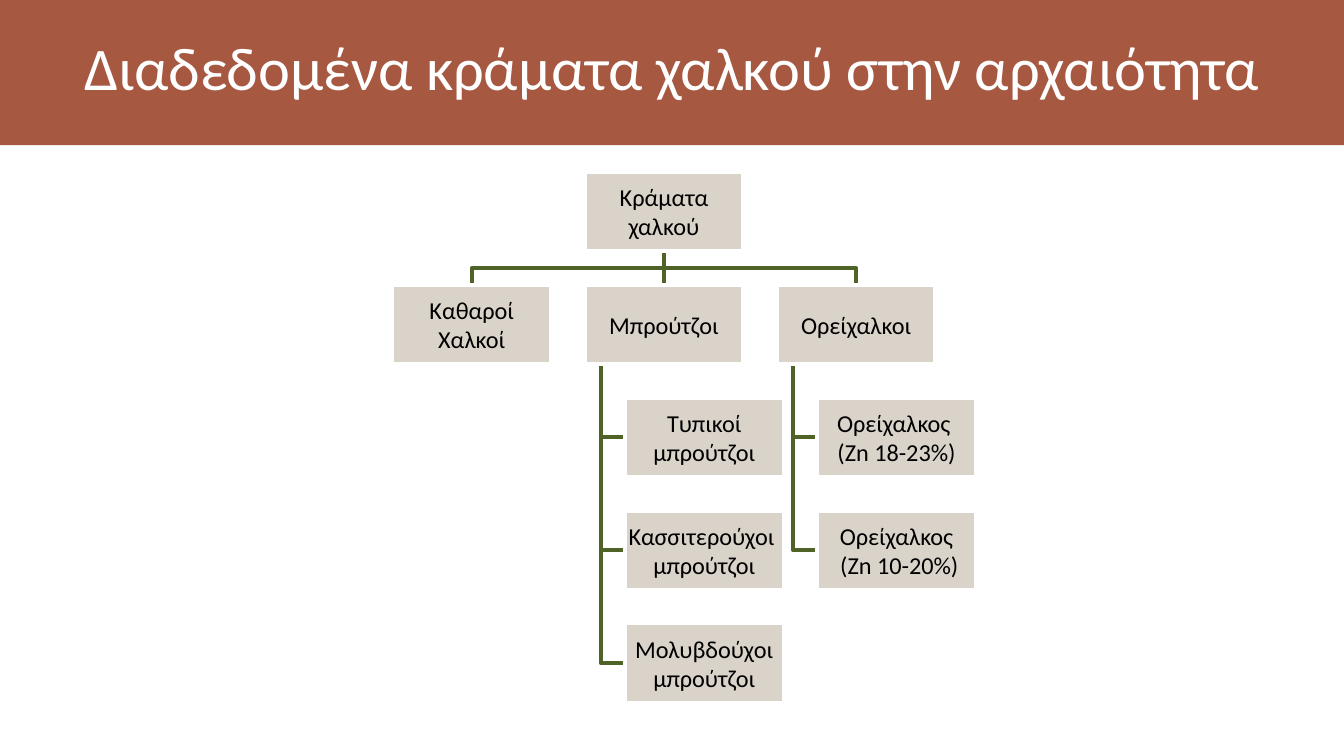
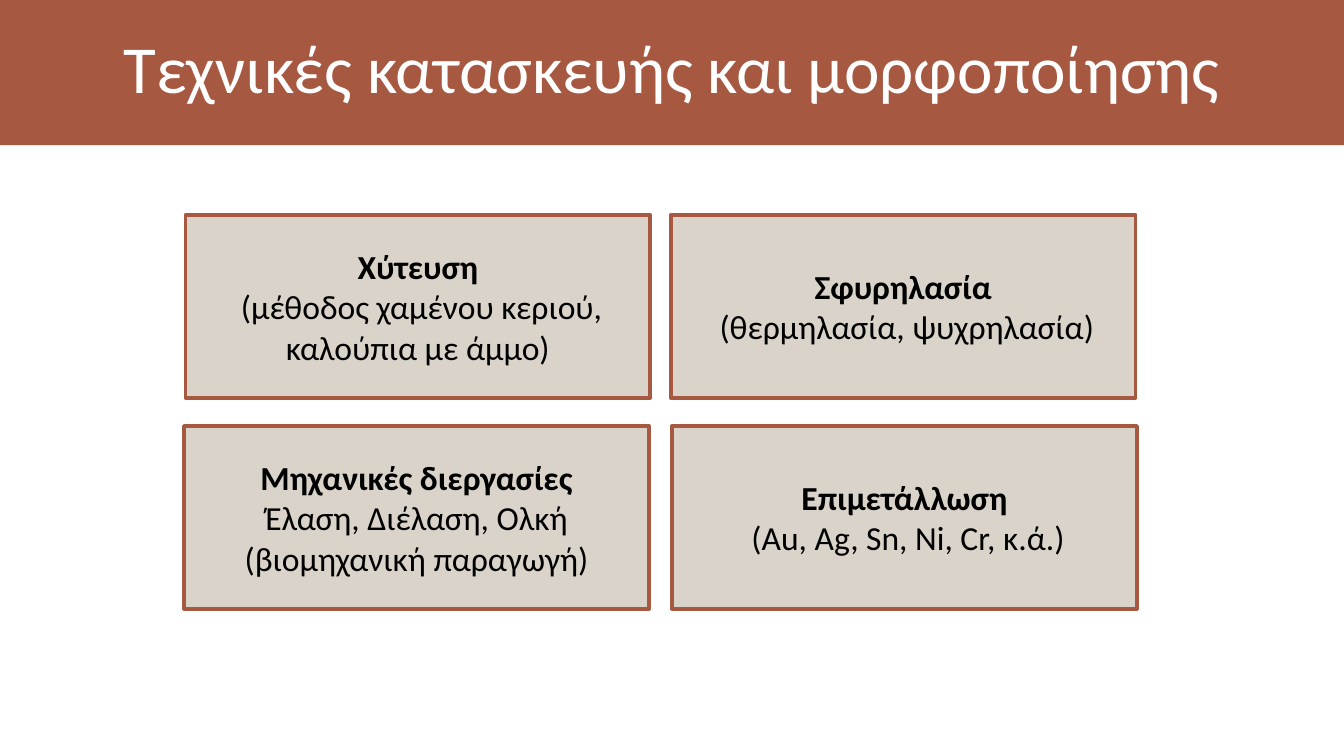
from dataclasses import dataclass

from lxml import etree
from pptx import Presentation
from pptx import util as u
from pptx.dml.color import RGBColor
from pptx.enum import shapes, text
from pptx.oxml.ns import qn

ALLOYS_TITLE = "Διαδεδομένα κράματα χαλκού στην αρχαιότητα"
ROOT = ["Κράματα χαλκού"]
BRANCHES = [
    (["Καθαροί Χαλκοί"], []),
    (["Μπρούτζοι"], [
        ["Τυπικοί μπρούτζοι"],
        ["Κασσιτερούχοι ", "μπρούτζοι"],
        ["Μολυβδούχοι", "μπρούτζοι"],
    ]),
    (["Ορείχαλκοι"], [
        ["Ορείχαλκος ", "(Zn 18-23%)"],
        ["Ορείχαλκος", " (Zn 10-20%)"],
    ]),
]

TECHNIQUES_TITLE = "Τεχνικές κατασκευής και μορφοποίησης"
TECHNIQUES = [
    ["Χύτευση", " (μέθοδος χαμένου κεριού, καλούπια με άμμο)"],
    ["Σφυρηλασία", " (θερμηλασία, ψυχρηλασία)"],
    ["Μηχανικές διεργασίες", "Έλαση, Διέλαση, Ολκή", "(βιομηχανική παραγωγή)"],
    ["Επιμετάλλωση", " (Au, Ag, Sn, Ni, Cr, κ.ά.)"],
]


@dataclass(frozen=True)
class Theme:
    font: str = "Calibri"
    rust: str = "A65841"
    sand: str = "DAD3C9"
    green: str = "4F6228"
    white: str = "FFFFFF"
    black: str = "000000"
    long_title: float = 32.4
    title: float = 36
    node: float = 13
    card: float = 18
    line: float = 2


T = Theme()
SLIDE_W, BAND_H = 10, 1.08
SLIDE_H = SLIDE_W * 9 / 16
NODE_W, NODE_H = 1.18, 0.59
TREE_X, TREE_Y, COL_STEP, ROW_STEP = 2.92, 1.28, 1.43, 0.84
LEAF_INDENT, TRUNK_INDENT = 0.3, 0.12
CARD_W, CARD_H = 3.46, 1.36
CARD_Y, CARD_ROW = 1.6, 1.57
CARD_ROWS = [(1.38, 4.99), (1.37, 5)]


def rgb(value):
    return RGBColor.from_string(value)


def apply(obj, **values):
    for name, value in values.items():
        setattr(obj, name, value)


def write(tf, lines, size, color, bold_first=False):
    apply(tf, word_wrap=True, auto_size=text.MSO_AUTO_SIZE.NONE,
          vertical_anchor=text.MSO_ANCHOR.MIDDLE)
    for i, line in enumerate(lines):
        p = tf.paragraphs[0] if i == 0 else tf.add_paragraph()
        p.alignment = text.PP_ALIGN.CENTER
        r = p.add_run()
        r.text = line
        apply(r.font, name=T.font, size=u.Pt(size), bold=bold_first and i == 0)
        r.font.color.rgb = rgb(color)


def set_line(sp, color):
    sp.line.color.rgb = rgb(color)
    sp.line.width = u.Pt(T.line)


def add_rect(s, x, y, w, h, fill, line=None):
    sp = s.shapes.add_shape(shapes.MSO_SHAPE.RECTANGLE, *map(u.Inches, (x, y, w, h)))
    sp.shadow.inherit = False
    sp.fill.solid()
    sp.fill.fore_color.rgb = rgb(fill)
    if line:
        set_line(sp, line)
    else:
        sp.line.fill.background()
    return sp


def add_node(s, x, y, lines):
    tf = add_rect(s, x, y, NODE_W, NODE_H, T.sand, T.white).text_frame
    inset = u.Inches(0.01)
    apply(tf, margin_left=inset, margin_top=inset, margin_right=inset, margin_bottom=inset)
    write(tf, lines, T.node, T.black)


def add_link(s, points):
    points = [(u.Inches(x), u.Inches(y)) for x, y in points]
    if len(points) == 2:
        c = s.shapes.add_connector(shapes.MSO_CONNECTOR.STRAIGHT, *points[0], *points[1])
        set_line(c, T.green)
        etree.SubElement(c.element.spPr, qn("a:effectLst"))
        return
    builder = s.shapes.build_freeform(*points[0])
    builder.add_line_segments(points[1:], close=False)
    sp = builder.convert_to_shape()
    sp.shadow.inherit = False
    sp.fill.background()
    set_line(sp, T.green)


def add_slide(prs, title, size):
    s = prs.slides.add_slide(prs.slide_layouts[5])
    sp = s.shapes.title
    apply(sp, left=u.Inches(0.5), top=u.Inches(0.07), width=u.Inches(9), height=u.Inches(0.85))
    write(sp.text_frame, [title], size, T.white)
    return s


def add_tree(s):
    root_x = TREE_X + COL_STEP
    root_mid, root_bottom = root_x + NODE_W / 2, TREE_Y + NODE_H
    branch_y = TREE_Y + ROW_STEP
    bus_y = (root_bottom + branch_y) / 2
    links, nodes = [], [(root_x, TREE_Y, ROOT)]
    for col, (label, leaves) in enumerate(BRANCHES):
        x = TREE_X + col * COL_STEP
        mid = x + NODE_W / 2
        nodes.append((x, branch_y, label))
        bends = [] if x == root_x else [(root_mid, bus_y), (mid, bus_y)]
        links.append([(root_mid, root_bottom), *bends, (mid, branch_y)])
        trunk = x + TRUNK_INDENT
        for row, leaf in enumerate(leaves, 1):
            y = branch_y + row * ROW_STEP
            leaf_mid = y + NODE_H / 2
            nodes.append((x + LEAF_INDENT, y, leaf))
            links.append([(trunk, branch_y + NODE_H), (trunk, leaf_mid),
                          (x + LEAF_INDENT, leaf_mid)])
    for points in links:
        add_link(s, points)
    for node in nodes:
        add_node(s, *node)


def add_cards(s):
    for i, lines in enumerate(TECHNIQUES):
        row, col = divmod(i, 2)
        sp = add_rect(s, CARD_ROWS[row][col], CARD_Y + row * CARD_ROW,
                      CARD_W, CARD_H, T.sand, T.rust)
        write(sp.text_frame, lines, T.card, T.black, bold_first=True)


def main():
    prs = Presentation()
    apply(prs, slide_width=u.Inches(SLIDE_W), slide_height=u.Inches(SLIDE_H))
    s = add_slide(prs, ALLOYS_TITLE, T.long_title)
    band = add_rect(s, 0, 0, SLIDE_W, BAND_H, T.rust)
    prs.slide_master.shapes.element.insert(2, band.element)
    add_tree(s)
    add_cards(add_slide(prs, TECHNIQUES_TITLE, T.title))
    prs.save("out.pptx")


if __name__ == "__main__":
    main()
